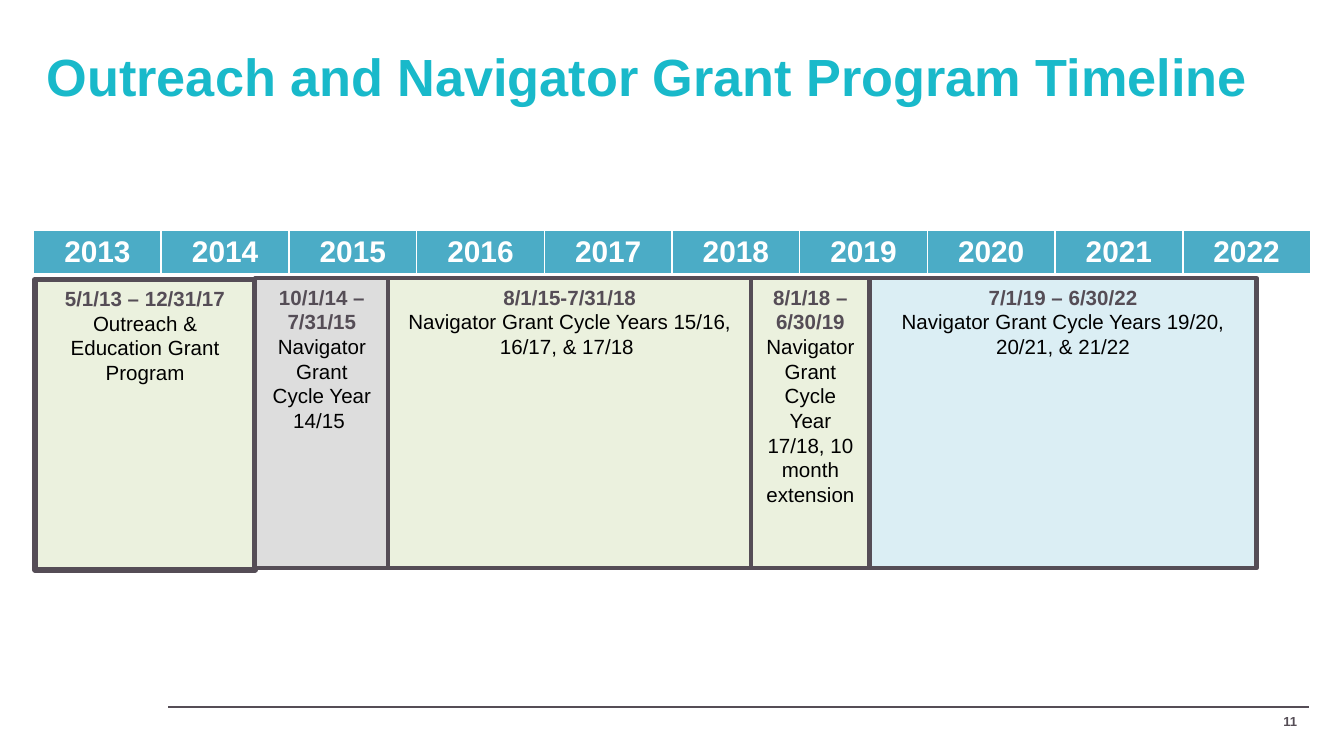
from lxml import etree
from pptx import Presentation
from pptx.dml.color import RGBColor
from pptx.enum.shapes import MSO_CONNECTOR, MSO_SHAPE
from pptx.enum.text import MSO_ANCHOR as ANCHOR, PP_ALIGN as ALIGN
from pptx.oxml.ns import qn
from pptx.util import Inches, Pt

TEAL = RGBColor(0x19, 0xB9, 0xCA)
BLUE = RGBColor(0x4B, 0xAC, 0xC6)
SLATE = RGBColor(0x55, 0x4D, 0x56)
GREEN = RGBColor(0xEB, 0xF1, 0xDE)
GRAY = RGBColor(0xDD, 0xDD, 0xDD)
PALE_BLUE = RGBColor(0xDB, 0xEE, 0xF4)
WHITE = RGBColor(0xFF, 0xFF, 0xFF)
BLACK = RGBColor(0, 0, 0)

# Content
TITLE = "Outreach and Navigator Grant Program Timeline"
PAGE_NUMBER = "11"
YEARS = range(2013, 2023)
# dates, description, width, top, line width, fill
PERIODS = [
    ("5/1/13 – 12/31/17", "Outreach & Education Grant Program", 1.64, 2.08, 3, GREEN),
    ("10/1/14 – 7/31/15", "Navigator Grant Cycle Year 14/15 ", 0.99, 2.07, 2.25, GRAY),
    ("8/1/15-7/31/18", "Navigator Grant Cycle Years 15/16, 16/17, & 17/18 ",
     2.7, 2.07, 2.25, GREEN),
    ("8/1/18 – 6/30/19", "Navigator Grant Cycle Year 17/18, 10 month extension",
     0.88, 2.07, 2.25, GREEN),
    ("7/1/19 – 6/30/22", "Navigator Grant Cycle Years 19/20, 20/21, & 21/22",
     2.88, 2.07, 2.25, PALE_BLUE),
]
PERIODS_LEFT, PERIOD_HEIGHT = 0.26, 2.16
YEAR_WIDTH, YEAR_HEIGHT = 0.95, 0.34
BORDERS = {"a:lnL": 1, "a:lnR": 1, "a:lnT": 1, "a:lnB": 3}


def write(paragraph, text, size, color, bold=True, align=ALIGN.LEFT):
    paragraph.alignment = align
    run = paragraph.add_run()
    run.text = text
    values = {"name": "Arial", "size": Pt(size), "bold": bold}
    for name, value in values.items():
        setattr(run.font, name, value)
    run.font.color.rgb = color


def add_text(slide, box, text, size, color, align, anchor):
    frame = slide.shapes.add_textbox(*map(Inches, box)).text_frame
    frame.word_wrap = True
    frame.vertical_anchor = anchor
    write(frame.paragraphs[0], text, size, color, align=align)


def add_borders(cell):
    properties = cell._tc.get_or_add_tcPr()
    for index, (tag, width) in enumerate(BORDERS.items()):
        line = etree.Element(qn(tag), w=str(Pt(width)))
        fill = etree.SubElement(line, qn("a:solidFill"))
        etree.SubElement(fill, qn("a:srgbClr"), val=str(WHITE))
        properties.insert(index, line)


# Widescreen 16:9 slide
presentation = Presentation()
presentation.slide_width = Inches(10)
presentation.slide_height = Inches(10 * 9 / 16)
slide = presentation.slides.add_slide(presentation.slide_layouts[6])

# Footer rule
rule = slide.shapes.add_connector(
    MSO_CONNECTOR.STRAIGHT, Inches(1.25), Inches(5.26), Inches(9.74), Inches(5.26))
rule.line.color.rgb = SLATE
rule.line.width = Pt(1)
etree.SubElement(rule._element.spPr, qn("a:effectLst"))

# Title
add_text(slide, (0.25, 0.28, 9.5, 0.69), TITLE, 28, TEAL, ALIGN.LEFT, ANCHOR.TOP)

# Year header
table = slide.shapes.add_table(
    1, len(YEARS), Inches(0.25), Inches(1.71),
    Inches(YEAR_WIDTH * len(YEARS)), Inches(YEAR_HEIGHT)).table
for column, year in enumerate(YEARS):
    table.columns[column].width = Inches(YEAR_WIDTH)
    cell = table.cell(0, column)
    cell.fill.solid()
    cell.fill.fore_color.rgb = BLUE
    cell.vertical_anchor = ANCHOR.MIDDLE
    cell.margin_top = cell.margin_bottom = Inches(0.03)
    add_borders(cell)
    write(cell.text_frame.paragraphs[0], str(year), 16, WHITE, align=ALIGN.CENTER)

# Grant periods, side by side
left = PERIODS_LEFT
for dates, description, width, top, line_width, color in PERIODS:
    shape = slide.shapes.add_shape(
        MSO_SHAPE.RECTANGLE, Inches(left), Inches(top), Inches(width), Inches(PERIOD_HEIGHT))
    left += width
    shape.shadow.inherit = False
    shape.fill.solid()
    shape.fill.fore_color.rgb = color
    shape.line.color.rgb = SLATE
    shape.line.width = Pt(line_width)
    frame = shape.text_frame
    frame.word_wrap = True
    frame.vertical_anchor = ANCHOR.TOP
    write(frame.paragraphs[0], dates, 11, SLATE, align=ALIGN.CENTER)
    write(frame.add_paragraph(), description, 11, BLACK, False, ALIGN.CENTER)

# Page number
add_text(slide, (8.95, 5.22, 0.8, 0.3), PAGE_NUMBER, 7, SLATE, ALIGN.RIGHT, ANCHOR.MIDDLE)

presentation.save("out.pptx")
